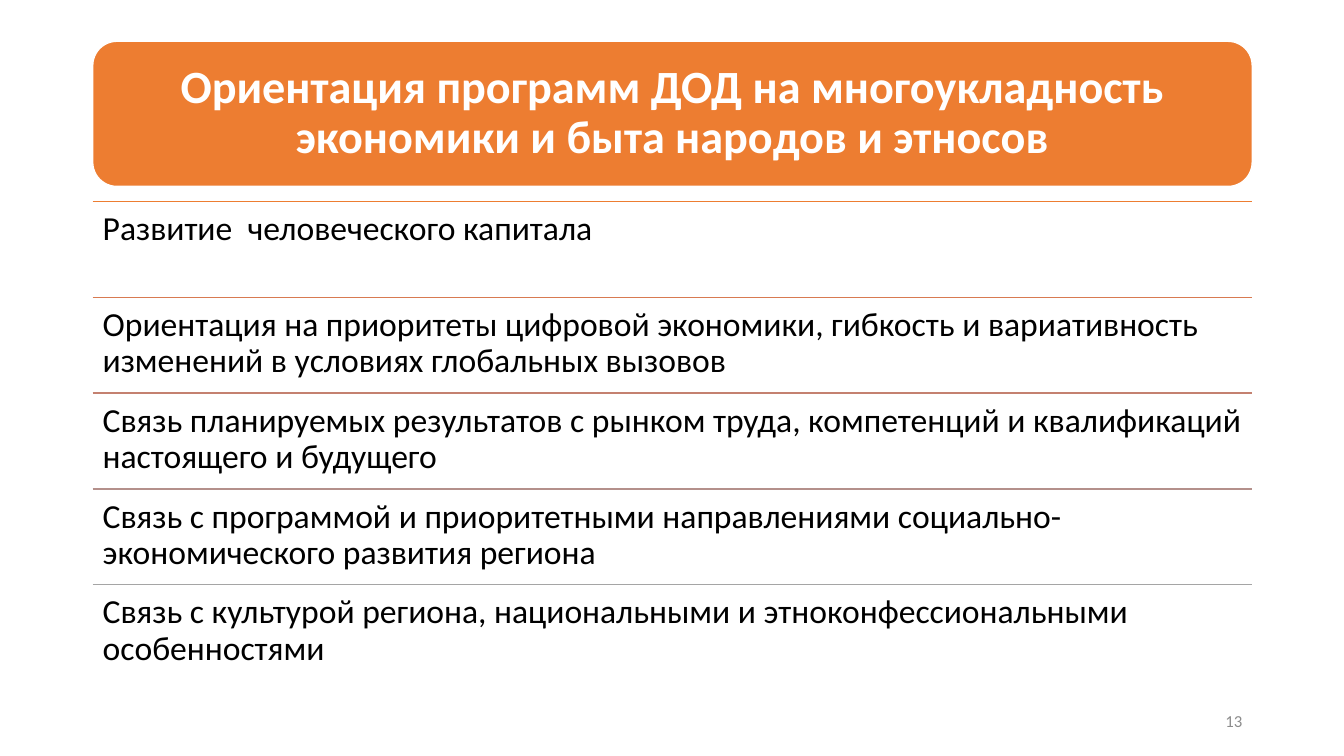
from lxml import etree
from pptx import Presentation
from pptx.dml.color import RGBColor
from pptx.enum.shapes import MSO_CONNECTOR as Link, MSO_SHAPE as Shape
from pptx.enum.text import MSO_ANCHOR as Anchor, MSO_AUTO_SIZE as Fit, PP_ALIGN as Align
from pptx.oxml.ns import qn
from pptx.util import Inches, Pt

LEFT, WIDTH = 0.92, 11.5
TOP, STEP = 2, 0.95
TITLE = "Ориентация программ ДОД на многоукладность экономики и быта народов и этносов"
ROWS = [
    ("ED7D31", "Развитие  человеческого капитала"),
    ("D87A51", "Ориентация на приоритеты цифровой экономики, гибкость и вариативность "
               "изменений в условиях глобальных вызовов"),
    ("C48170", "Связь планируемых результатов с рынком труда, компетенций и квалификаций "
               "настоящего и будущего"),
    ("B4908B", "Связь с программой и приоритетными направлениями "
               "социально-экономического развития региона"),
    ("A5A5A5", "Связь с культурой региона, национальными и этноконфессиональными "
               "особенностями"),
]


def color(code):
    return RGBColor.from_string(code)


class Page:
    font = "Calibri"

    def __init__(self, deck):
        self.slide = deck.slides.add_slide(deck.slide_layouts[5])
        self.shapes = self.slide.shapes

    def label(self, shape, text, size, ink, bold=False, align=Align.LEFT,
              anchor=Anchor.TOP, pad=0.1, lead=0.9):
        """Set the text of a shape and format its single paragraph."""
        frame = shape.text_frame
        frame.text = text
        frame.word_wrap = True
        frame.auto_size = Fit.NONE
        frame.vertical_anchor = anchor
        frame.margin_left = frame.margin_right = Inches(pad)
        frame.margin_top = frame.margin_bottom = Inches(pad)
        para = frame.paragraphs[0]
        para.alignment = align
        para.line_spacing = lead
        font = para.runs[0].font
        font.name, font.size, font.bold = self.font, Pt(size), bold
        font.color.rgb = color(ink)

    def banner(self, x, y, w, h, fill):
        box = self.shapes.add_shape(Shape.ROUNDED_RECTANGLE, *map(Inches, (x, y, w, h)))
        box.shadow.inherit = False
        box.fill.solid()
        box.fill.fore_color.rgb = color(fill)
        box.line.color.rgb = color("FFFFFF")
        box.line.width = Pt(1)
        # Send the banner behind the title
        self.shapes.element.insert(2, box.element)

    def title(self, x, y, w, h, text):
        head = self.shapes.title
        head.left, head.top, head.width, head.height = map(Inches, (x, y, w, h))
        self.label(head, text, 33, "FFFFFF", True, Align.CENTER, Anchor.MIDDLE, 0.14)

    def rule(self, x, y, w, ink):
        line = self.shapes.add_connector(Link.STRAIGHT, *map(Inches, (x, y, x + w, y)))
        line.line.color.rgb = color(ink)
        line.line.width = Pt(1)
        etree.SubElement(line.element.spPr, qn("a:effectLst"))

    def text(self, x, y, w, h, text, size, ink, **style):
        box = self.shapes.add_textbox(*map(Inches, (x, y, w, h)))
        self.label(box, text, size, ink, **style)


def main():
    deck = Presentation()
    deck.slide_width, deck.slide_height = Inches(13.33), Inches(7.5)
    page = Page(deck)
    page.banner(LEFT, 0.41, WIDTH, 1.44, "ED7D31")
    page.title(0.99, 0.48, 11.36, 1.3, TITLE)
    for i, (ink, text) in enumerate(ROWS):
        y = TOP + i * STEP
        page.rule(LEFT, y, WIDTH, ink)
        page.text(LEFT, y, WIDTH, STEP, text, 24, "000000")
    page.text(9.42, 6.95, 3, 0.4, "13", 12, "8C8C8C",
              align=Align.RIGHT, anchor=Anchor.MIDDLE, lead=1.0)
    deck.save("out.pptx")


if __name__ == "__main__":
    main()
